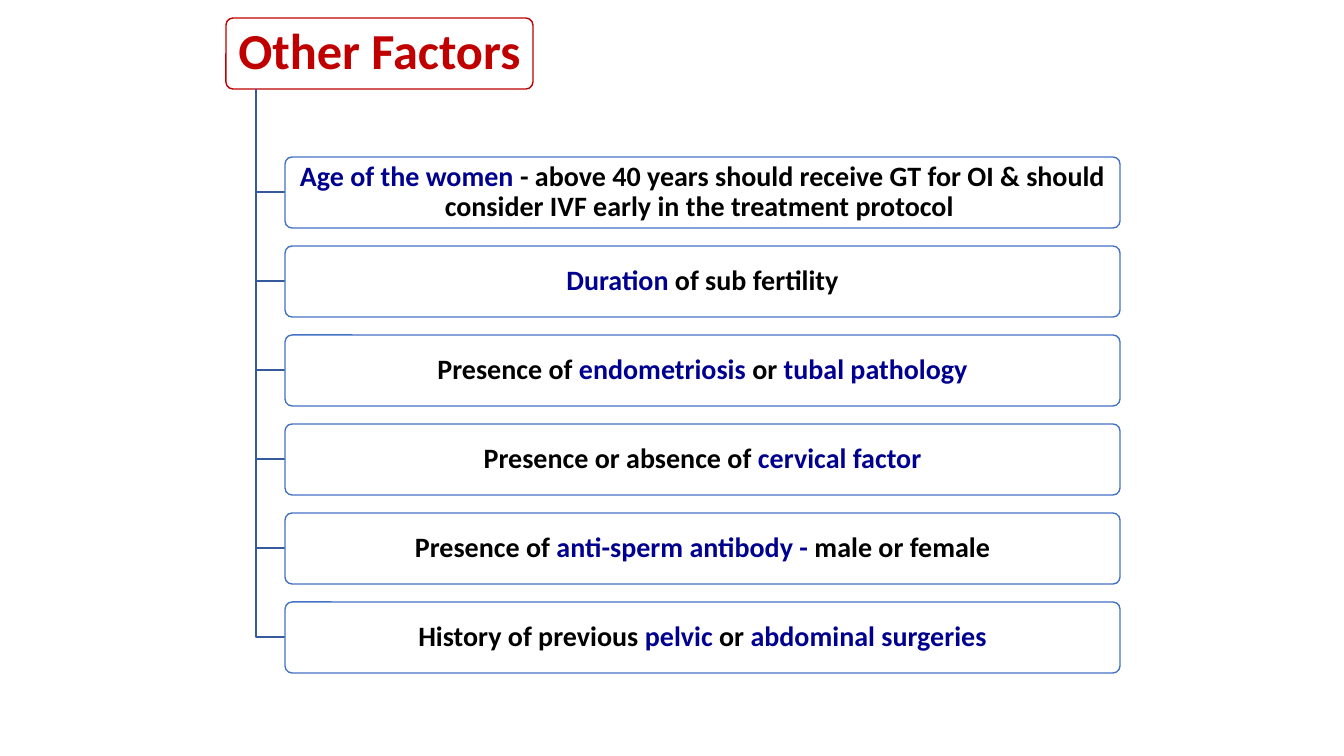
from lxml import etree
from pptx import Presentation
from pptx.dml.color import RGBColor
from pptx.enum.shapes import MSO_SHAPE
from pptx.enum.text import MSO_ANCHOR, MSO_AUTO_SIZE, PP_ALIGN
from pptx.oxml.ns import qn
from pptx.util import Emu, Pt

ROUNDED = MSO_SHAPE.ROUNDED_RECTANGLE
MIDDLE = MSO_ANCHOR.MIDDLE
CENTER = PP_ALIGN.CENTER
NO_AUTOFIT = MSO_AUTO_SIZE.NONE
TITLE_ONLY = 5
EMU_PER_PX = 914400 / 100.8

COLORS = {
    "title": "C00000",
    "box": "4472C4",
    "branch": "365B9D",
    "key": "000090",
    "plain": "000000",
    "white": "FFFFFF",
}

FACTORS = [
    [("Age of the women", "key"),
     (" - above 40 years should receive GT for OI & should consider IVF early in the treatment protocol ", "plain")],
    [("Duration ", "key"), ("of sub fertility", "plain")],
    [("Presence of ", "plain"), ("endometriosis ", "key"),
     ("or ", "plain"), ("tubal pathology", "key")],
    [("Presence or absence of ", "plain"), ("cervical factor", "key")],
    [("Presence of ", "plain"), ("anti-sperm antibody - ", "key"),
     ("male or female", "plain")],
    [("History of previous ", "plain"), ("pelvic", "key"),
     (" or ", "plain"), ("abdominal surgeries", "key")],
]

FACTOR_LEFT, FACTOR_TOP, FACTOR_WIDTH = 285, 157, 835
BOX_HEIGHT, FACTOR_PITCH = 71, 89
TITLE_LEFT, TITLE_TOP, TITLE_WIDTH = 226, 18, 307
TRUNK_X = 256


def px(length):
    return Emu(round(length * EMU_PER_PX))


def color(name):
    return RGBColor.from_string(COLORS[name])


class HierarchySlide:
    font = "Calibri"

    def __init__(self, presentation):
        self.slide = presentation.slides.add_slide(presentation.slide_layouts[TITLE_ONLY])

    def outline(self, shape, line_color):
        shape.shadow.inherit = False
        shape.line.color.rgb = color(line_color)
        shape.line.width = Pt(1)

    def box(self, left, top, width, height, line_color, filled=True):
        shape = self.slide.shapes.add_shape(ROUNDED, px(left), px(top), px(width), px(height))
        shape.adjustments[0] = 0.1
        self.outline(shape, line_color)
        if filled:
            shape.fill.solid()
            shape.fill.fore_color.rgb = color("white")
            solid = shape.element.spPr.find(qn("a:solidFill"))
            etree.SubElement(solid[0], qn("a:alpha"), val="90000")
        else:
            shape.fill.background()
        return shape

    def add_text(self, shape, runs, size, side_inset, end_inset):
        frame = shape.text_frame
        frame.word_wrap = True
        frame.auto_size = NO_AUTOFIT
        frame.vertical_anchor = MIDDLE
        frame.margin_left = frame.margin_right = px(side_inset)
        frame.margin_top = frame.margin_bottom = px(end_inset)
        paragraph = frame.paragraphs[0]
        paragraph.alignment = CENTER
        paragraph.line_spacing = 0.9
        for text, run_color in runs:
            run = paragraph.add_run()
            run.text = text
            run.font.name = self.font
            run.font.size = Pt(size)
            run.font.bold = True
            run.font.color.rgb = color(run_color)

    def title(self, text, left, top, width, height):
        self.box(left, top, width, height, "title", filled=False)
        title = self.slide.shapes.title
        title.left, title.top = px(left), px(top)
        title.width, title.height = px(width), px(height)
        self.add_text(title, [(text, "title")], 36, 9, 7)

    def branch(self, x, top, end_x, end_y):
        builder = self.slide.shapes.build_freeform(px(x), px(top))
        builder.add_line_segments([(px(x), px(end_y)), (px(end_x), px(end_y))], close=False)
        shape = builder.convert_to_shape()
        shape.fill.background()
        self.outline(shape, "branch")

    def factor(self, runs, left, top, width, height):
        self.add_text(self.box(left, top, width, height, "box"), runs, 20, 6, 5)


def main():
    presentation = Presentation()
    presentation.slide_width, presentation.slide_height = px(1344), px(756)
    hierarchy = HierarchySlide(presentation)
    hierarchy.title("Other Factors", TITLE_LEFT, TITLE_TOP, TITLE_WIDTH, BOX_HEIGHT)
    for index, runs in enumerate(FACTORS):
        top = FACTOR_TOP + index * FACTOR_PITCH
        hierarchy.branch(TRUNK_X, TITLE_TOP + BOX_HEIGHT, FACTOR_LEFT, top + BOX_HEIGHT // 2)
        hierarchy.factor(runs, FACTOR_LEFT, top, FACTOR_WIDTH, BOX_HEIGHT)
    presentation.save("out.pptx")


if __name__ == "__main__":
    main()
